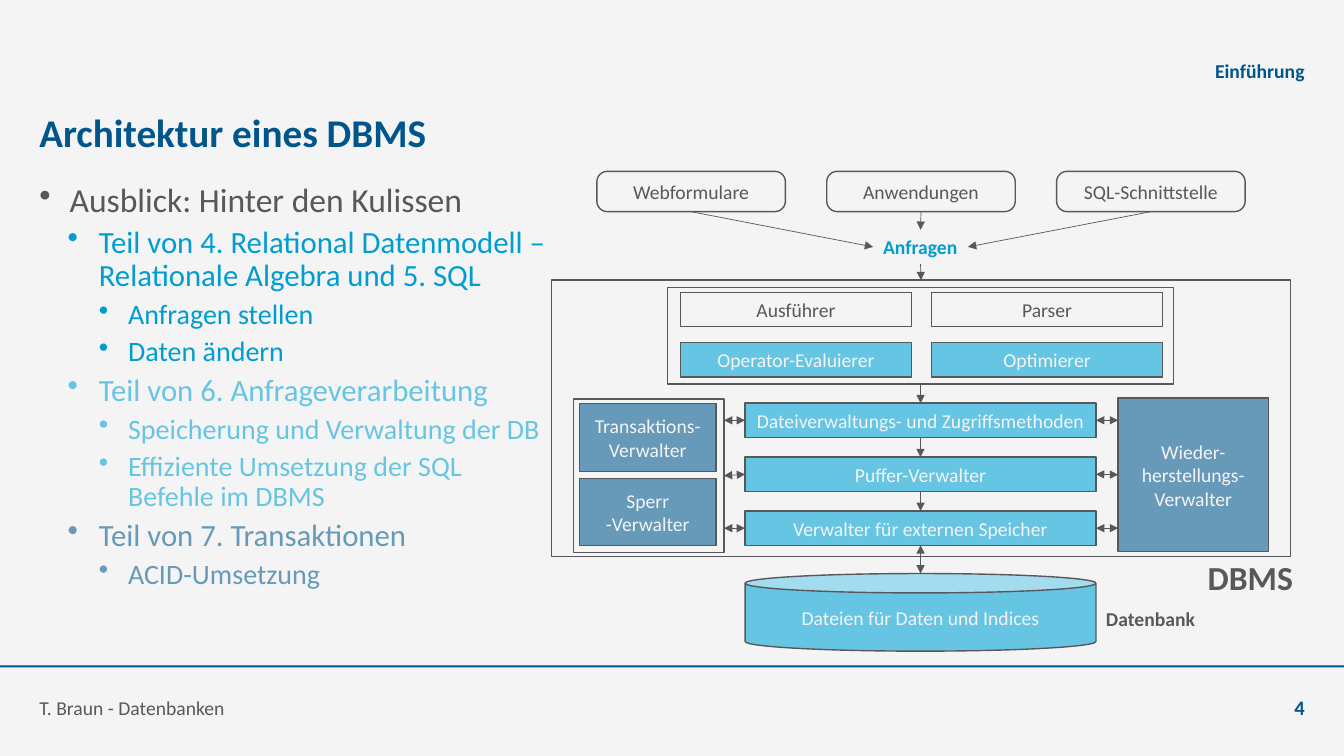
from dataclasses import dataclass
from typing import Optional, Union

from lxml.etree import SubElement
from pptx import Presentation
from pptx.dml.color import RGBColor
from pptx.enum.shapes import MSO_CONNECTOR, MSO_SHAPE
from pptx.enum.text import MSO_ANCHOR, MSO_AUTO_SIZE, PP_ALIGN
from pptx.oxml.ns import qn
from pptx.shapes.autoshape import Shape
from pptx.slide import Slide
from pptx.text.text import TextFrame
from pptx.util import Inches, Pt

FONT = "Calibri"
GREY, NAVY, PAPER = "58585A", "00568A", "F4F4F4"
CYAN, SKY, STEEL = "009DD1", "67C5E4", "679AB9"
TOP, LEFT, BOTTOM, RIGHT = range(4)


@dataclass
class Box:
    text: str
    left: float
    top: float
    width: float
    height: float
    fill: Optional[str] = None
    kind: MSO_SHAPE = MSO_SHAPE.RECTANGLE
    wraps: bool = True


@dataclass
class Label:
    text: str
    left: float
    top: float
    width: float
    height: float
    color: str
    size: float = 14
    bold: bool = True
    align: PP_ALIGN = PP_ALIGN.LEFT
    inset: float = 0
    wraps: bool = True


@dataclass
class Bullet:
    text: str
    level: int
    color: str


@dataclass
class Point:
    x: float
    y: float


@dataclass
class Side:
    shape: Shape
    site: int


End = Union[Point, Side]

BULLET_SIZES = (24, 22, 20)
BULLET_INDENTS = ((0.3, -0.3), (0.59, -0.31), (0.88, -0.29))
BULLETS = [
    Bullet("Ausblick: Hinter den Kulissen", 0, GREY),
    Bullet("Teil von 4. Relational Datenmodell – Relationale Algebra und 5. SQL", 1, CYAN),
    Bullet("Anfragen stellen", 2, CYAN),
    Bullet("Daten ändern", 2, CYAN),
    Bullet("Teil von 6. Anfrageverarbeitung", 1, SKY),
    Bullet("Speicherung und Verwaltung der DB", 2, SKY),
    Bullet("Effiziente Umsetzung der SQL Befehle im DBMS", 2, SKY),
    Bullet("Teil von 7. Transaktionen", 1, STEEL),
    Bullet("ACID-Umsetzung", 2, STEEL),
]


def rgb(color: str) -> RGBColor:
    return RGBColor.from_string(color)


def set_text(frame: TextFrame, text: str, color: str, size: float, bold: bool,
             align: PP_ALIGN, anchor: MSO_ANCHOR) -> None:
    frame.text = text
    frame.vertical_anchor = anchor
    for paragraph in frame.paragraphs:
        paragraph.alignment = align
        paragraph.font.name = FONT
        paragraph.font.size = Pt(size)
        paragraph.font.bold = bold
        paragraph.font.color.rgb = rgb(color)


def set_insets(frame: TextFrame, inset: float) -> None:
    frame.margin_left = frame.margin_right = Inches(inset)
    frame.margin_top = frame.margin_bottom = Inches(inset / 2)


def add_label(slide: Slide, label: Label, anchor: MSO_ANCHOR) -> Shape:
    shape = slide.shapes.add_textbox(Inches(label.left), Inches(label.top),
                                     Inches(label.width), Inches(label.height))
    shape.text_frame.word_wrap = label.wraps
    set_insets(shape.text_frame, label.inset)
    set_text(shape.text_frame, label.text, label.color, label.size, label.bold, label.align, anchor)
    return shape


def add_box(slide: Slide, box: Box) -> Shape:
    shape = slide.shapes.add_shape(box.kind, Inches(box.left), Inches(box.top),
                                   Inches(box.width), Inches(box.height))
    shape.shadow.inherit = False
    shape.line.color.rgb = rgb(GREY)
    shape.line.width = Pt(1)
    if box.fill:
        shape.fill.solid()
        shape.fill.fore_color.rgb = rgb(box.fill)
    else:
        shape.fill.background()
    if box.kind == MSO_SHAPE.ROUNDED_RECTANGLE:
        shape.adjustments[0] = 0.26
    if box.text:
        shape.text_frame.word_wrap = box.wraps
        set_text(shape.text_frame, box.text, PAPER if box.fill else GREY, 14, False,
                 PP_ALIGN.CENTER, MSO_ANCHOR.MIDDLE)
    return shape


def add_arrow(slide: Slide, start: End, end: End, both_ways: bool = False) -> None:
    """Draw an arrow; a Side is joined to its shape, a Point stays free."""
    corners = [(Inches(e.x), Inches(e.y)) if isinstance(e, Point) else (0, 0) for e in (start, end)]
    arrow = slide.shapes.add_connector(MSO_CONNECTOR.STRAIGHT, *corners[0], *corners[1])
    if isinstance(start, Side):
        arrow.begin_connect(start.shape, start.site)
    if isinstance(end, Side):
        arrow.end_connect(end.shape, end.site)
    arrow.line.color.rgb = rgb(GREY)
    arrow.line.width = Pt(0.5)
    line = arrow.line._get_or_add_ln()
    if both_ways:
        SubElement(line, qn("a:headEnd"), type="triangle")
    SubElement(line, qn("a:tailEnd"), type="triangle")
    SubElement(arrow._element.spPr, qn("a:effectLst"))


def add_outline(slide: Slide) -> None:
    frame = slide.shapes.add_textbox(Inches(0.39), Inches(1.82), Inches(5.09), Inches(4.64)).text_frame
    frame.word_wrap = True
    set_insets(frame, 0)
    set_text(frame, "\n".join(bullet.text for bullet in BULLETS), GREY, 24, False,
             PP_ALIGN.LEFT, MSO_ANCHOR.TOP)
    for paragraph, bullet in zip(frame.paragraphs, BULLETS):
        paragraph.level = bullet.level
        paragraph.line_spacing = 0.9
        paragraph.space_before = Pt(5)
        paragraph.font.size = Pt(BULLET_SIZES[bullet.level])
        paragraph.font.color.rgb = rgb(bullet.color)
        margin, indent = BULLET_INDENTS[bullet.level]
        properties = paragraph._p.get_or_add_pPr()
        properties.set("marL", str(Inches(margin)))
        properties.set("indent", str(Inches(indent)))
        mark = properties.makeelement(qn("a:buChar"), {"char": "•"})
        properties.find(qn("a:defRPr")).addprevious(mark)


def add_architecture(slide: Slide) -> None:
    clients = [add_box(slide, Box(text, 5.92 + 2.28 * column, 1.7, 1.87, 0.4,
                                  kind=MSO_SHAPE.ROUNDED_RECTANGLE))
               for column, text in enumerate(("Webformulare", "Anwendungen", "SQL-Schnittstelle"))]
    queries = add_label(slide, Label("Anfragen", 8.66, 2.28, 0.94, 0.34, CYAN, inset=0.1, wraps=False),
                        MSO_ANCHOR.TOP)
    system = add_box(slide, Box("", 5.47, 2.78, 7.33, 2.74))
    engine = add_box(slide, Box("", 6.62, 2.85, 5.02, 0.96))
    engine_parts = ((("Ausführer", "Parser"), None), (("Operator-Evaluierer", "Optimierer"), SKY))
    for row, (texts, fill) in enumerate(engine_parts):
        for column, text in enumerate(texts):
            add_box(slide, Box(text, 6.75 + 2.49 * column, 2.9 + 0.5 * row, 2.29, 0.34, fill))

    layer_texts = ("Dateiverwaltungs- und Zugriffsmethoden", "Puffer-Verwalter",
                   "Verwalter für externen Speicher")
    layer_tops = [4 + 0.535 * row for row in range(len(layer_texts))]
    layers = [add_box(slide, Box(text, 7.39, top, 3.48, 0.34, SKY, wraps=False))
              for text, top in zip(layer_texts, layer_tops)]
    concurrency = add_box(slide, Box("", 5.69, 3.96, 1.49, 1.52))
    add_box(slide, Box("Transaktions-Verwalter", 5.75, 4, 1.35, 0.68, STEEL))
    add_box(slide, Box("Sperr\n-Verwalter", 5.75, 4.75, 1.35, 0.66, STEEL))
    recovery = add_box(slide, Box("Wieder-herstellungs-Verwalter", 11.09, 3.95, 1.49, 1.52, STEEL))
    add_box(slide, Box("Dateien für Daten und Indices", 7.39, 5.69, 3.48, 0.77, SKY, MSO_SHAPE.CAN))
    for label in (Label("Datenbank", 10.87, 5.97, 1.09, 0.34, GREY, inset=0.1, wraps=False),
                  Label("DBMS", 11.88, 5.48, 1.06, 0.5, GREY, 24, inset=0.1, wraps=False)):
        add_label(slide, label, MSO_ANCHOR.TOP)

    for client, site in zip(clients, (LEFT, TOP, RIGHT)):
        add_arrow(slide, Side(client, BOTTOM), Side(queries, site))
    add_arrow(slide, Side(queries, BOTTOM), Side(system, TOP))
    for upper, lower in zip([engine, *layers], layers):
        add_arrow(slide, Side(upper, BOTTOM), Side(lower, TOP))
    add_arrow(slide, Side(layers[-1], BOTTOM), Point(9.13, 5.69), both_ways=True)
    for row, (layer, top) in enumerate(zip(layers, layer_tops)):
        middle = top + 0.17
        is_central = row == 1
        left_end = Side(concurrency, RIGHT) if is_central else Point(7.18, middle)
        right_end = Side(recovery, LEFT) if is_central else Point(11.09, middle)
        add_arrow(slide, Side(layer, LEFT), left_end, both_ways=True)
        add_arrow(slide, right_end, Side(layer, RIGHT), both_ways=True)


def main() -> None:
    presentation = Presentation()
    presentation.slide_width, presentation.slide_height = Inches(13.33), Inches(7.5)
    slide = presentation.slides.add_slide(presentation.slide_layouts[5])
    slide.background.fill.solid()
    slide.background.fill.fore_color.rgb = rgb(PAPER)

    title = slide.shapes.title
    title.left, title.top, title.width, title.height = map(Inches, (0.39, 0.99, 12.55, 0.63))
    title.text_frame.auto_size = MSO_AUTO_SIZE.NONE
    set_insets(title.text_frame, 0)
    set_text(title.text_frame, "Architektur eines DBMS", NAVY, 28, True, PP_ALIGN.LEFT, MSO_ANCHOR.MIDDLE)

    footer_rule = add_box(slide, Box("", 0, 6.6, 13.33, 0.02, NAVY))
    footer_rule.line.fill.background()
    for label in (Label("Einführung", 3.93, 0.43, 9.01, 0.39, NAVY, align=PP_ALIGN.RIGHT),
                  Label("T. Braun - Datenbanken", 0.39, 6.75, 9.2, 0.39, GREY, bold=False),
                  Label("4", 12.15, 6.75, 0.79, 0.39, NAVY, 14.7, align=PP_ALIGN.RIGHT)):
        add_label(slide, label, MSO_ANCHOR.BOTTOM)
    add_outline(slide)
    add_architecture(slide)
    presentation.save("out.pptx")


if __name__ == "__main__":
    main()
